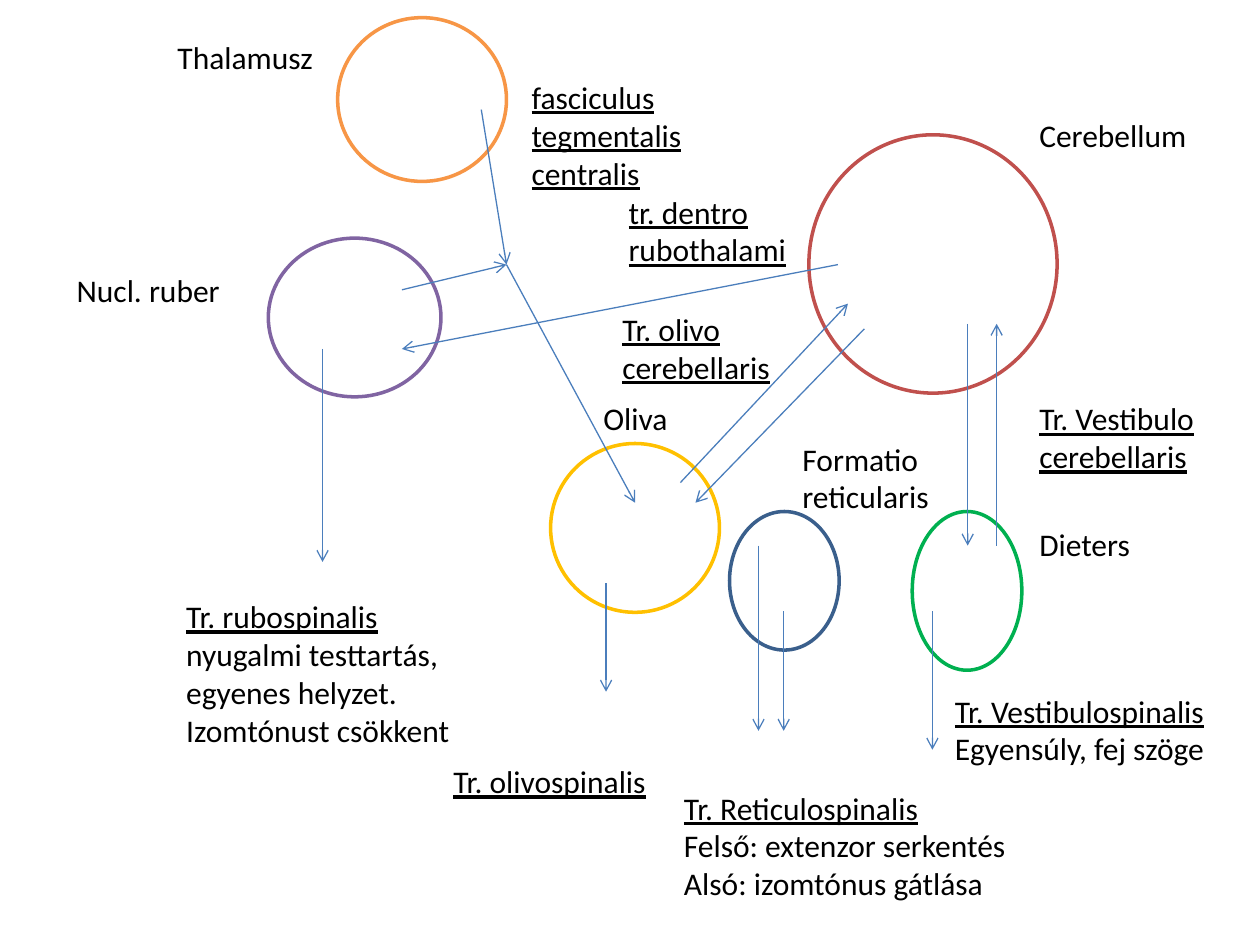
from lxml import etree
from pptx import Presentation
from pptx import util as u
from pptx.dml.color import RGBColor
from pptx.enum import shapes, text
from pptx.oxml.ns import qn

PX = 9144  # EMU per px, 100 px to the inch

BLACK = RGBColor(0x00, 0x00, 0x00)
ARROW_BLUE = RGBColor(0x4B, 0x7E, 0xBC)
GREEN = RGBColor(0x00, 0xB0, 0x50)
NAVY = RGBColor(0x3A, 0x5F, 0x8C)
RED = RGBColor(0xC0, 0x50, 0x4D)
YELLOW = RGBColor(0xFF, 0xC0, 0x00)
PURPLE = RGBColor(0x80, 0x64, 0xA2)
ORANGE = RGBColor(0xF7, 0x96, 0x46)

FONT = {"name": "Calibri", "size": u.Pt(18)}

# Nuclei: left, top, width, height, outline
NUCLEI = [
    (268, 14, 134, 130, ORANGE),   # Thalamusz
    (213, 189, 137, 126, PURPLE),  # Nucl. ruber
    (642, 107, 197, 205, RED),     # Cerebellum
    (437, 352, 134, 134, YELLOW),  # Oliva
    (579, 406, 87, 110, NAVY),     # Formatio reticularis
    (724, 406, 87, 126, GREEN),    # Dieters
]

# Pathways: start x, start y, end x, end y
JUNCTION = (402, 210)
PATHWAYS = [
    (382, 87, *JUNCTION),
    (319, 230, *JUNCTION),
    (*JUNCTION, 504, 399),
    (665, 210, 319, 277),
    (540, 383, 673, 241),
    (686, 261, 552, 399),
    (768, 257, 768, 433),
    (791, 433, 791, 257),
    (256, 277, 256, 446),
    (481, 463, 481, 549),
    (602, 433, 602, 580),
    (622, 485, 622, 580),
    (740, 485, 740, 595),
]

# Labels: left, top, width, height, wrap, underlined lines, plain lines
LABELS = [
    (131, 25, 129, 40, False, [], ["Thalamusz"]),
    (51, 210, 135, 40, False, [], ["Nucl. ruber"]),
    (815, 87, 138, 40, False, [], ["Cerebellum"]),
    (469, 312, 72, 40, False, [], ["Oliva"]),
    (627, 344, 122, 71, False, [], ["Formatio", "reticularis"]),
    (815, 412, 93, 40, False, [], ["Dieters"]),
    (412, 57, 145, 101, True, ["fasciculus tegmentalis centralis"], []),
    (489, 148, 147, 71, False, ["tr. dentro", "rubothalami"], []),
    (484, 241, 139, 71, False, ["Tr. olivo", "cerebellaris"], []),
    (815, 312, 144, 71, False, ["Tr. Vestibulo", "cerebellaris"], []),
    (138, 469, 244, 131, True, ["Tr. rubospinalis"],
     ["nyugalmi testtartás, egyenes helyzet. Izomtónust csökkent"]),
    (350, 600, 174, 40, False, ["Tr. olivospinalis"], []),
    (533, 621, 278, 101, False, ["Tr. Reticulospinalis"],
     ["Felső: extenzor serkentés", "Alsó: izomtónus gátlása"]),
    (748, 544, 226, 71, False, ["Tr. Vestibulospinalis"],
     ["Egyensúly, fej szöge"]),
]


def emu(*lengths):
    return [length * PX for length in lengths]


def add_nucleus(slide, left, top, width, height, color):
    shape = slide.shapes.add_shape(
        shapes.MSO_SHAPE.OVAL, *emu(left, top, width, height))
    shape.shadow.inherit = False
    shape.fill.background()
    shape.line.color.rgb = color
    shape.line.width = u.Pt(2)


def add_pathway(slide, *ends):
    connector = slide.shapes.add_connector(
        shapes.MSO_CONNECTOR.STRAIGHT, *emu(*ends))
    connector.line.color.rgb = ARROW_BLUE
    connector.line.width = u.Pt(0.75)
    properties = connector._element.spPr
    line = properties.find(qn("a:ln"))
    etree.SubElement(line, qn("a:tailEnd"), type="arrow")
    etree.SubElement(properties, qn("a:effectLst"))


def add_label(slide, left, top, width, height, wrap, underlined, plain):
    frame = slide.shapes.add_textbox(*emu(left, top, width, height)).text_frame
    frame.word_wrap = wrap
    frame.auto_size = text.MSO_AUTO_SIZE.SHAPE_TO_FIT_TEXT
    lines = [(line, True) for line in underlined]
    lines += [(line, False) for line in plain]
    for index, (line, underline) in enumerate(lines):
        paragraph = frame.add_paragraph() if index else frame.paragraphs[0]
        run = paragraph.add_run()
        run.text = line
        for name, value in {**FONT, "underline": underline}.items():
            setattr(run.font, name, value)
        run.font.color.rgb = BLACK


def main():
    presentation = Presentation()
    presentation.slide_width, presentation.slide_height = emu(1000, 750)
    slide = presentation.slides.add_slide(presentation.slide_layouts[6])
    for add, items in ((add_nucleus, NUCLEI), (add_pathway, PATHWAYS),
                       (add_label, LABELS)):
        for item in items:
            add(slide, *item)
    presentation.save("out.pptx")


if __name__ == "__main__":
    main()
